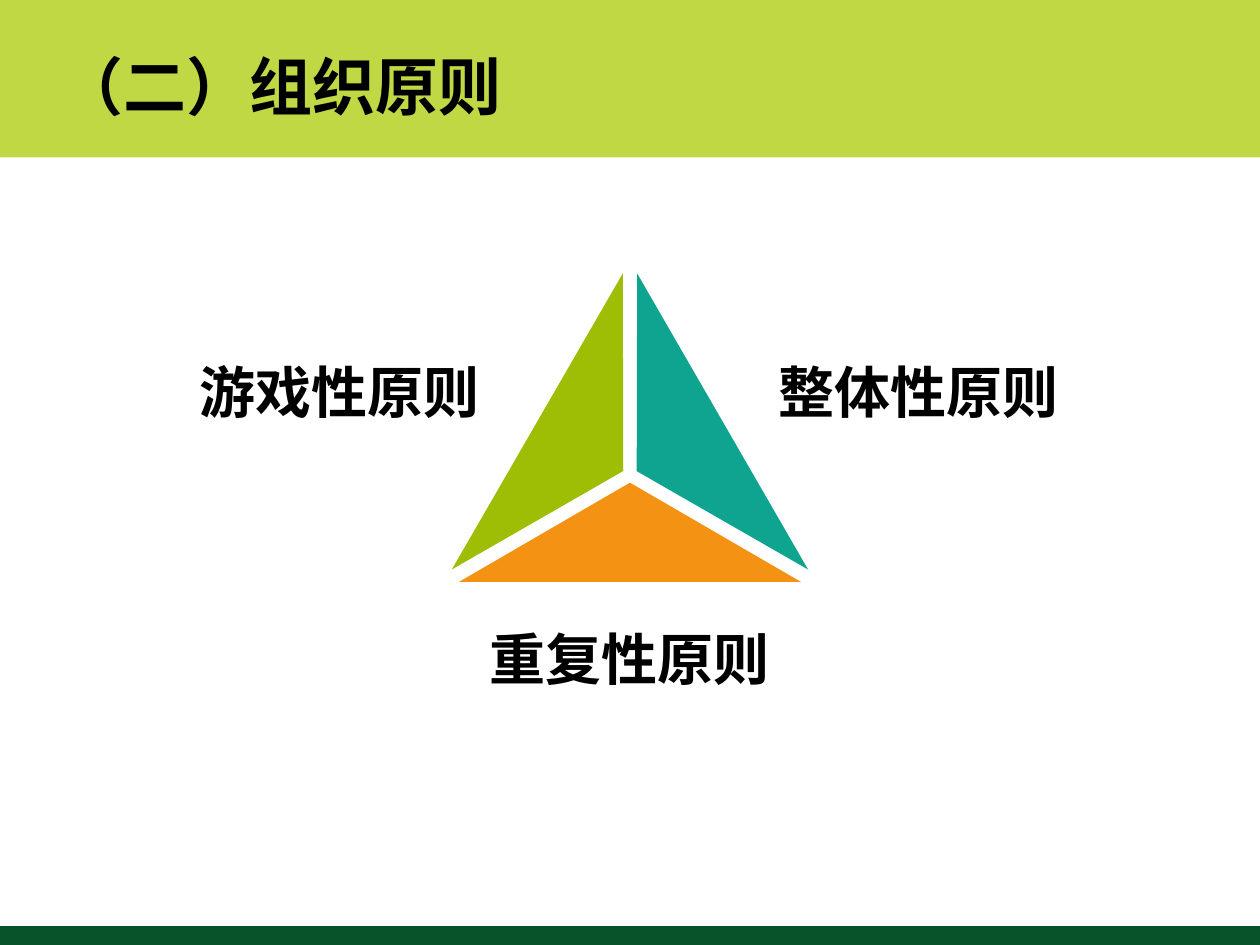
from dataclasses import dataclass
from math import cos, radians, sin

from pptx import Presentation
from pptx.dml.color import RGBColor
from pptx.enum.shapes import MSO_SHAPE
from pptx.enum.text import MSO_ANCHOR, MSO_AUTO_SIZE, PP_ALIGN
from pptx.oxml.ns import qn
from pptx.util import Pt


@dataclass(frozen=True)
class Theme:
    font: str = "Noto Sans CJK SC"
    text: str = "000000"
    header: str = "BFD844"
    footer: str = "09532A"
    orange: str = "F49213"
    teal: str = "0EA490"
    green: str = "9EBD05"
    title_size: int = 36
    label_size: int = 32


THEME = Theme()
WIDTH, HEIGHT = 720, 540


def paint(sp, color):
    sp.shadow.inherit = False
    sp.fill.solid()
    sp.fill.fore_color.rgb = RGBColor.from_string(color)
    sp.line.fill.background()


def write(sp, text, size, align):
    tf = sp.text_frame
    tf.text = text
    tf.word_wrap = True
    tf.auto_size = MSO_AUTO_SIZE.NONE
    tf.vertical_anchor = MSO_ANCHOR.TOP
    p = tf.paragraphs[0]
    p.alignment = align
    p.line_spacing = 1.0
    p.space_before = Pt(0)
    font = p.runs[0].font
    font.name, font.size, font.bold = THEME.font, Pt(size), True
    font.color.rgb = RGBColor.from_string(THEME.text)
    # Chinese text takes the East Asian typeface
    latin = p.runs[0]._r.rPr.find(qn("a:latin"))
    ea = latin.makeelement(qn("a:ea"), {"typeface": THEME.font})
    latin.addnext(ea)


def add_band(s, top, height, color):
    band = s.shapes.add_shape(MSO_SHAPE.RECTANGLE, 0, Pt(top), Pt(WIDTH), Pt(height))
    paint(band, color)
    # Bands lie behind the title
    s.shapes.title._element.addprevious(band._element)


def add_title(s, text, left, top, width, height):
    title = s.shapes.title
    title.left, title.top = Pt(left), Pt(top)
    title.width, title.height = Pt(width), Pt(height)
    write(title, text, THEME.title_size, PP_ALIGN.LEFT)


def add_label(s, text, left, top, width, height, align):
    label = s.shapes.add_textbox(Pt(left), Pt(top), Pt(width), Pt(height))
    write(label, text, THEME.label_size, align)


def add_triangle(s, cx, cy, width, height, radius):
    """Three equal wedges, turned by thirds about the centre."""
    for angle, color in ((0, THEME.orange), (240, THEME.teal), (120, THEME.green)):
        x = cx - radius * sin(radians(angle))
        y = cy + radius * cos(radians(angle))
        top, base = y - height / 2, y + height / 2
        outline = s.shapes.build_freeform(Pt(x), Pt(top))
        outline.add_line_segments(
            [(Pt(x + width / 2), Pt(base)), (Pt(x - width / 2), Pt(base))], close=True)
        wedge = outline.convert_to_shape()
        wedge.rotation = angle
        paint(wedge, color)


def add_principles(s, left, top):
    # Labels around the divided triangle
    add_label(s, "重复性原则", left + 170, top + 152.6, 239, 69, PP_ALIGN.CENTER)
    add_label(s, "游戏性原则", left, top, 211, 74, PP_ALIGN.RIGHT)
    add_label(s, "整体性原则", left + 367.2, top, 235, 74, PP_ALIGN.LEFT)
    add_triangle(s, left + 289.5, top + 70.5, width=195.4, height=56.7, radius=32.8)


def main():
    prs = Presentation()
    prs.slide_width, prs.slide_height = Pt(WIDTH), Pt(HEIGHT)
    s = prs.slides.add_slide(prs.slide_layouts[5])
    # Header and footer
    add_band(s, 0, 90, THEME.header)
    add_band(s, HEIGHT - 10.8, 10.8, THEME.footer)
    add_title(s, "（二）组织原则", 27.4, 23.8, 490, 51)
    # Content
    add_principles(s, 70.5, 200.9)
    prs.save("out.pptx")


if __name__ == "__main__":
    main()
